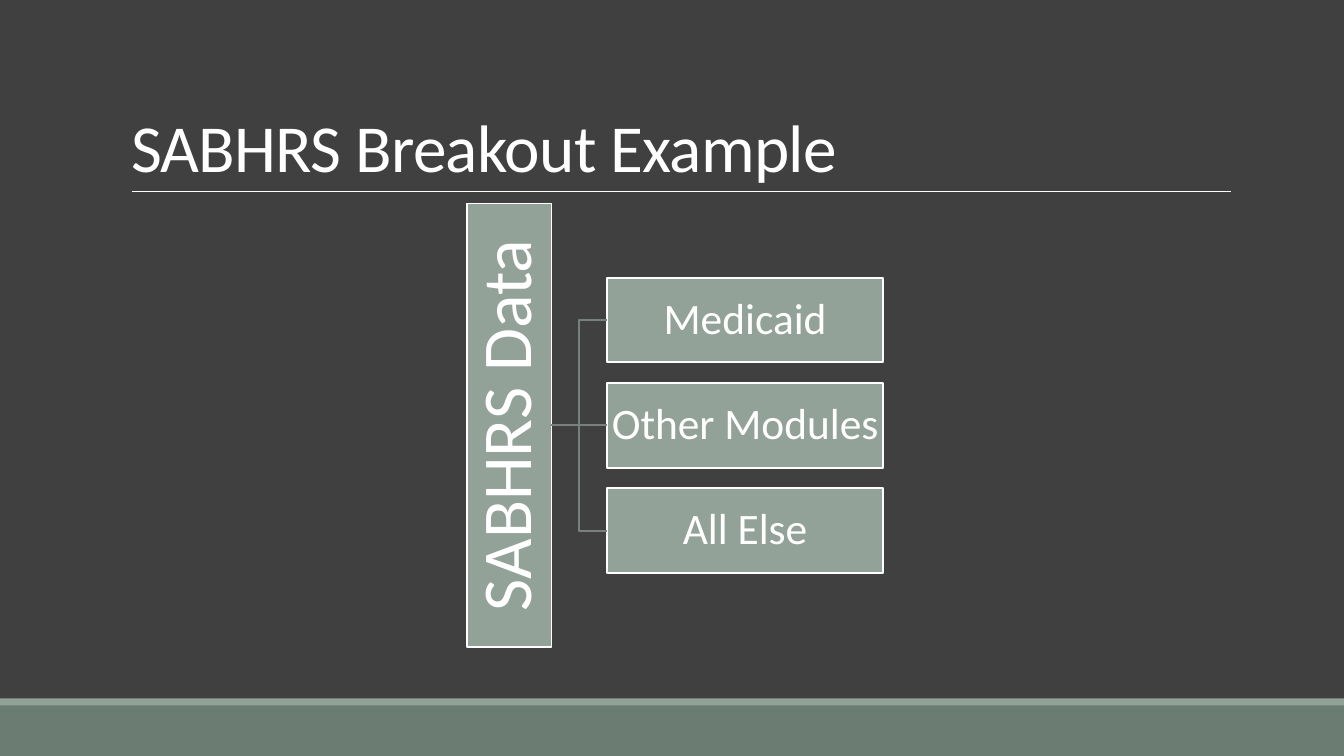
from dataclasses import dataclass

from pptx import Presentation
from pptx.dml.color import RGBColor as Color
from pptx.enum import shapes as kinds, text as enum
from pptx.oxml.ns import qn
from pptx.util import Inches, Pt


@dataclass(frozen=True)
class Theme:
    """Hold the colours, font and sizes of the slide."""
    font: str = "Calibri"
    back: Color = Color(0x40, 0x40, 0x40)
    band: Color = Color(0x6B, 0x7D, 0x72)
    sage: Color = Color(0x93, 0xA2, 0x99)
    link: Color = Color(0x76, 0x82, 0x7B)
    white: Color = Color(0xFF, 0xFF, 0xFF)
    title: float = 48
    root: float = 50
    item: float = 31
    line: float = 1.25
    rule: float = 0.5


THEME = Theme()


def style(para, size, lead):
    """Set the font and line spacing of a paragraph."""
    para.line_spacing = lead
    para.font.name = THEME.font
    para.font.size = Pt(size)
    para.font.color.rgb = THEME.white


def add_title(slide, words):
    """Place and format the title."""
    title = slide.shapes.title
    title.left, title.top = Inches(1.2), Inches(0.31)
    title.width, title.height = Inches(11), Inches(1.59)
    frame = title.text_frame
    frame.text = words
    frame.auto_size = enum.MSO_AUTO_SIZE.NONE
    frame.vertical_anchor = enum.MSO_ANCHOR.BOTTOM
    para = frame.paragraphs[0]
    para.alignment = enum.PP_ALIGN.LEFT
    style(para, THEME.title, 0.85)
    para.runs[0].font._element.set("spc", "-50")


def add_rect(slide, left, top, width, height, fill):
    """Draw a plain filled rectangle."""
    rect = slide.shapes.add_shape(
        kinds.MSO_SHAPE.RECTANGLE,
        Inches(left), Inches(top), Inches(width), Inches(height))
    rect.shadow.inherit = False
    rect.fill.solid()
    rect.fill.fore_color.rgb = fill
    rect.line.fill.background()
    return rect


def add_box(slide, words, left, mid, width, height, size, inset):
    """Draw a labelled box centred on a height."""
    box = add_rect(slide, left, mid - height / 2, width, height, THEME.sage)
    box.line.color.rgb = THEME.white
    box.line.width = Pt(THEME.line)
    frame = box.text_frame
    frame.word_wrap = True
    frame.vertical_anchor = enum.MSO_ANCHOR.MIDDLE
    frame.margin_left = frame.margin_right = Inches(inset)
    frame.margin_top = frame.margin_bottom = Inches(inset)
    frame.text = words
    para = frame.paragraphs[0]
    para.alignment = enum.PP_ALIGN.CENTER
    style(para, size, 0.9)
    return box


def add_line(slide, start, end, color, width, kind=kinds.MSO_CONNECTOR.STRAIGHT):
    """Draw a connector without a shadow."""
    line = slide.shapes.add_connector(
        kind, *(Inches(value) for value in (*start, *end)))
    line.line.color.rgb = color
    line.line.width = Pt(width)
    props = line._element.spPr
    props.append(props.makeelement(qn("a:effectLst"), {}))
    return line


def add_tree(slide, name, items):
    """Draw the upright root box and its joined branches."""
    mid, edge, left, step, height = 4.22, 5.47, 6.02, 1.045, 0.84
    root = add_box(slide, name, edge - height, mid, height, 4.4,
                   THEME.root, 0.03)
    root.text_frame._txBody.bodyPr.set("vert", "vert270")
    for index, words in enumerate(items):
        shift = index - (len(items) - 1) / 2
        level = mid + shift * step
        box = add_box(slide, words, left, level, 2.74, height,
                      THEME.item, 0.02)
        kind = kinds.MSO_CONNECTOR.ELBOW if shift else kinds.MSO_CONNECTOR.STRAIGHT
        link = add_line(slide, (edge, mid), (left, level),
                        THEME.link, THEME.line, kind)
        link.begin_connect(root, 3)
        link.end_connect(box, 1)


def main():
    """Build and save the slide."""
    deck = Presentation()
    deck.slide_width, deck.slide_height = Inches(13.33), Inches(7.5)
    slide = deck.slides.add_slide(deck.slide_layouts[5])
    slide.background.fill.solid()
    slide.background.fill.fore_color.rgb = THEME.back
    add_rect(slide, 0, 7, 13.33, 0.5, THEME.band)
    add_rect(slide, 0, 6.93, 13.33, 0.07, THEME.sage)
    add_line(slide, (1.31, 1.9), (12.21, 1.9), THEME.white, THEME.rule)
    add_title(slide, "SABHRS Breakout Example")
    add_tree(slide, "SABHRS Data", ["Medicaid", "Other Modules", "All Else"])
    deck.save("out.pptx")


if __name__ == "__main__":
    main()
